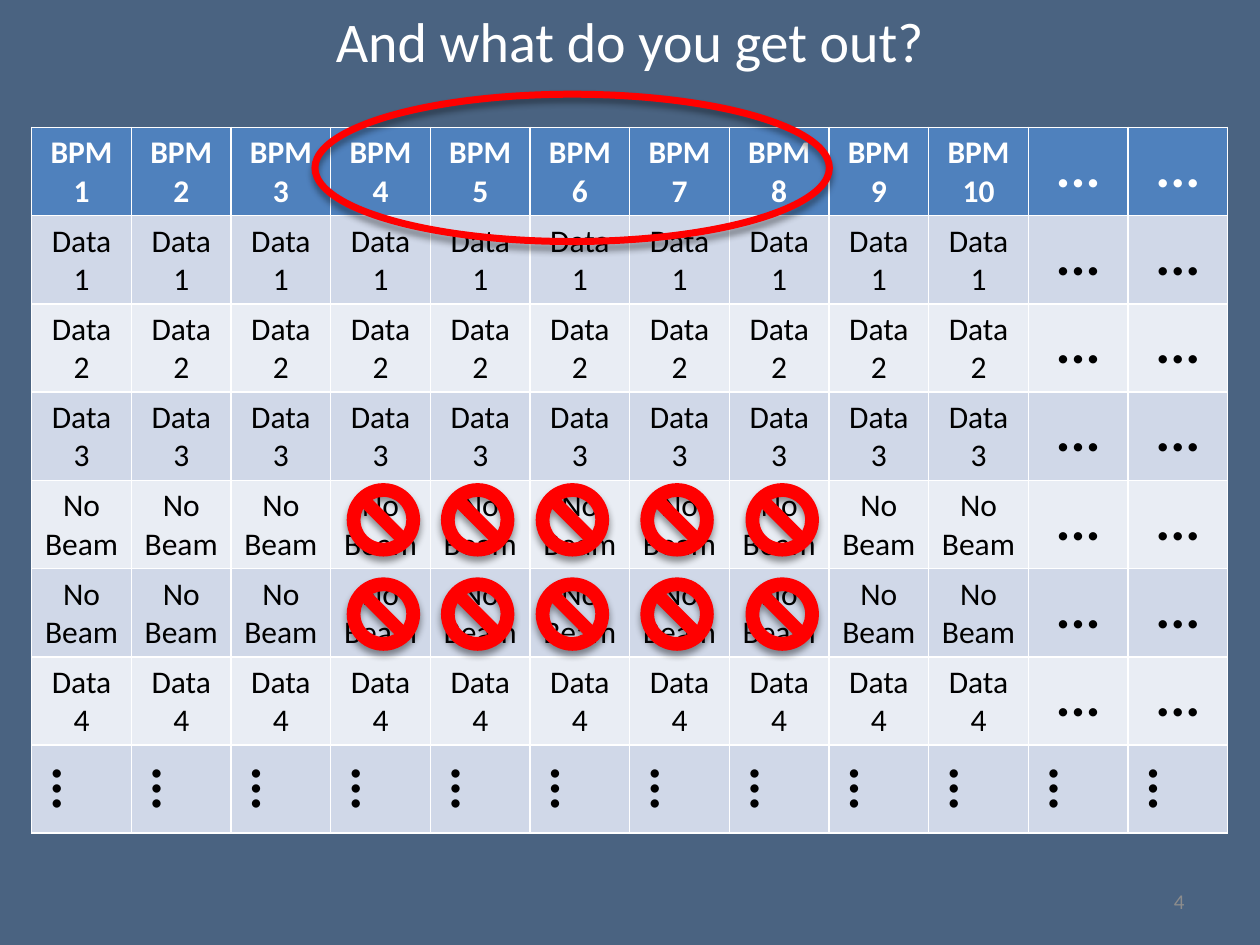
from lxml import etree
from pptx import Presentation
from pptx.dml.color import RGBColor
from pptx.enum import shapes, text
from pptx.oxml.ns import qn
from pptx.util import Cm, Pt

COLORS = {
    "page": "4A6381", "header": "4F81BD", "odd": "D0D8E8", "even": "E9EDF4",
    "white": "FFFFFF", "black": "000000", "number": "8C8C8C", "red": "FF0000",
}
CENTER, RIGHT = text.PP_ALIGN.CENTER, text.PP_ALIGN.RIGHT


def write(frame, words, size, color, align=CENTER, bold=False):
    para = frame.paragraphs[0]
    para.text = words
    para.alignment = align
    para.font.name = "Calibri"
    para.font.size = Pt(size)
    para.font.bold = bold
    para.font.color.rgb = RGBColor.from_string(COLORS[color])
    return para


def add_shadow(shape):
    """Cast a soft black shadow straight down."""
    shape.shadow.inherit = False
    effects = shape._element.spPr.find(qn("a:effectLst"))
    shadow = etree.SubElement(
        effects, qn("a:outerShdw"), blurRad=str(Pt(4)), dist=str(Pt(3)),
        dir="5400000", rotWithShape="0")
    black = etree.SubElement(shadow, qn("a:srgbClr"), val=COLORS["black"])
    etree.SubElement(black, qn("a:alpha"), val="40000")


deck = Presentation()
deck.slide_width, deck.slide_height = Cm(25.4), Cm(19.05)
page = deck.slides.add_slide(deck.slide_layouts[5])
page.background.fill.solid()
page.background.fill.fore_color.rgb = RGBColor.from_string(COLORS["page"])

# Slide number and title
box = page.shapes.add_textbox(Cm(18.2), Cm(17.66), Cm(5.93), Cm(1.01))
box.text_frame.word_wrap = True
box.text_frame.vertical_anchor = text.MSO_ANCHOR.MIDDLE
write(box.text_frame, "4", 12, "number", RIGHT)

title = page.shapes.title
title.left, title.top, title.width, title.height = 0, 0, Cm(25.4), Cm(1.62)
title.text_frame.vertical_anchor = text.MSO_ANCHOR.TOP
write(title.text_frame, "And what do you get out?", 32, "white")

# Table: ten monitors, then two columns and one row of dots
row_labels = ["Data\v1", "Data\v2", "Data\v3", "No Beam", "No Beam", "Data\v4"]
monitors = 10
rows = [[f"BPM\v{number}" for number in range(1, monitors + 1)]]
rows += [[label] * monitors for label in row_labels]
rows = [row + ["...", "..."] for row in rows]
rows.append(["..."] * (monitors + 2))

table = page.shapes.add_table(
    len(rows), monitors + 2, Cm(0.64), Cm(2.57), Cm(24.12), Cm(14.16)).table
for column in table.columns:
    column.width = Cm(2.01)
for row_index, row in enumerate(rows):
    table.rows[row_index].height = Cm(1.77)
    is_header = row_index == 0
    fill = "header" if is_header else "odd" if row_index % 2 else "even"
    for column_index, words in enumerate(row):
        cell = table.cell(row_index, column_index)
        cell.fill.solid()
        cell.fill.fore_color.rgb = RGBColor.from_string(COLORS[fill])
        is_dots = words == "..."
        para = write(cell.text_frame, words, 32 if is_dots else 18,
                     "white" if is_header else "black",
                     bold=is_header or is_dots)
        if row_index == len(rows) - 1:
            cell._tc.get_or_add_tcPr().set("vert", "vert")
            if column_index not in (1, 2):
                para.line_spacing = Pt(49)

# Ring around the monitors without beam, and a sign on each empty reading
ring = page.shapes.add_shape(
    shapes.MSO_SHAPE.OVAL, Cm(6.35), Cm(1.9), Cm(10.37), Cm(2.97))
ring.fill.background()
ring.line.color.rgb = RGBColor.from_string(COLORS["red"])
ring.line.width = Pt(4)
add_shadow(ring)

for top in (9.74, 11.64):
    for left in (6.99, 8.89, 10.8, 12.91, 15.03):
        sign = page.shapes.add_shape(
            shapes.MSO_SHAPE.NO_SYMBOL, Cm(left), Cm(top), Cm(1.48), Cm(1.48))
        sign.fill.solid()
        sign.fill.fore_color.rgb = RGBColor.from_string(COLORS["red"])
        sign.line.fill.background()
        add_shadow(sign)

deck.save("out.pptx")
